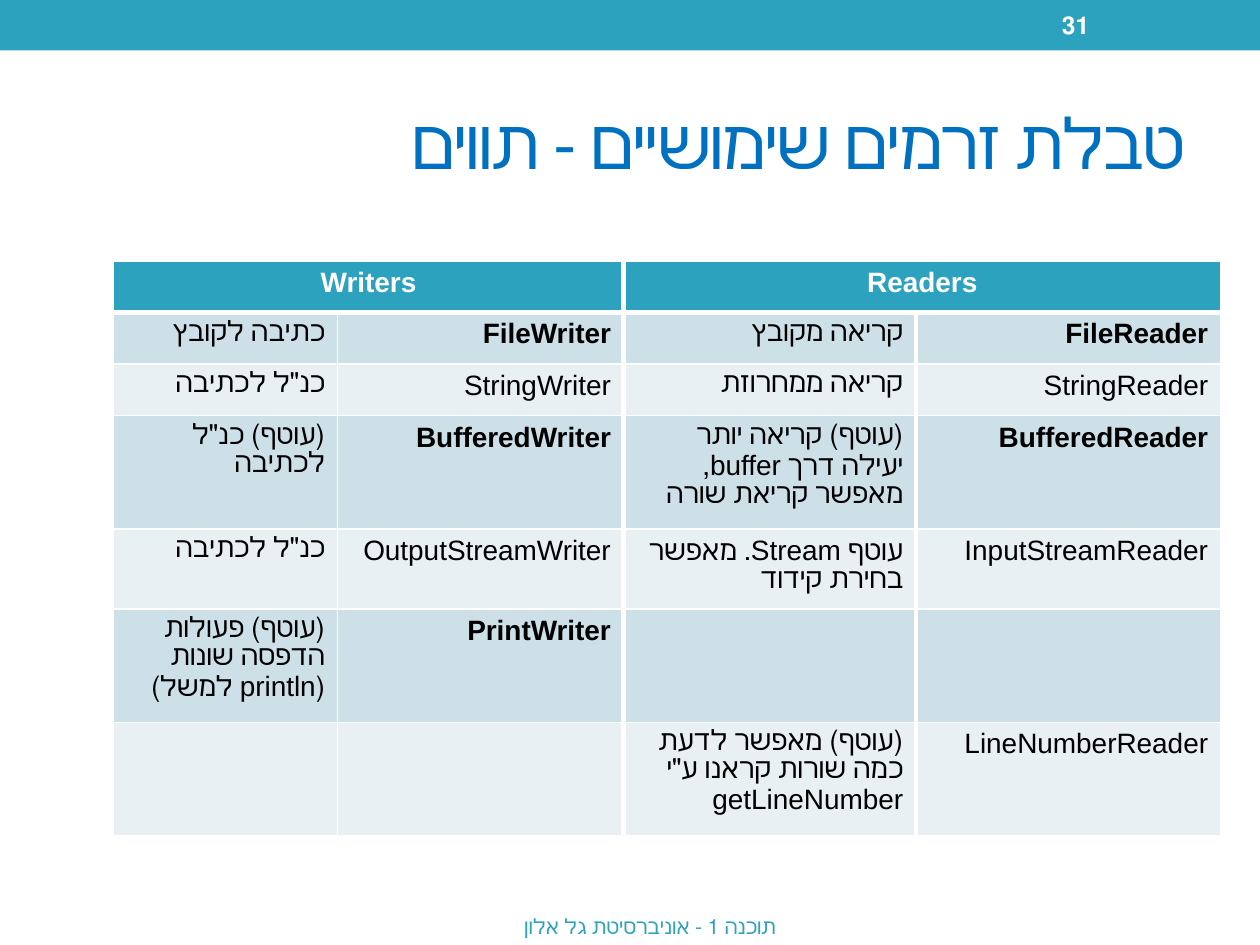
from lxml.etree import SubElement
from pptx import Presentation
from pptx.dml.color import RGBColor
from pptx.enum.shapes import MSO_SHAPE
from pptx.enum.text import MSO_ANCHOR, PP_ALIGN
from pptx.oxml.ns import qn
from pptx.util import Inches, Pt

TEAL = RGBColor(0x2D, 0xA2, 0xBF)
BLUE = RGBColor(0x00, 0x70, 0xC0)
WHITE = RGBColor(0xFF, 0xFF, 0xFF)
BLACK = RGBColor(0, 0, 0)
BANDS = RGBColor(0xCD, 0xE0, 0xE8), RGBColor(0xE8, 0xF0, 0xF4)

TITLE = "טבלת זרמים שימושיים - תווים"
FOOTER = "תוכנה 1 - אוניברסיטת גל אלון"
HEADERS = ["Writers", "Readers"]
ROWS = [
    ("כתיבה לקובץ", "FileWriter", "קריאה מקובץ", "FileReader"),
    ('כנ"ל לכתיבה', "StringWriter", "קריאה ממחרוזת", "StringReader"),
    ('(עוטף) כנ"ל לכתיבה', "BufferedWriter",
     "(עוטף) קריאה יותר יעילה דרך buffer, מאפשר קריאת שורה", "BufferedReader"),
    ('כנ"ל לכתיבה', "OutputStreamWriter",
     "עוטף Stream. מאפשר בחירת קידוד", "InputStreamReader"),
    ("(עוטף) פעולות הדפסה שונות (println למשל)", "PrintWriter", "", ""),
    ("", "", '(עוטף) מאפשר לדעת כמה שורות קראנו ע"י getLineNumber', "LineNumberReader"),
]
KEY_CLASSES = {"FileWriter", "FileReader", "BufferedWriter", "BufferedReader", "PrintWriter"}
COL_WIDTHS = [1.78, 2.27, 2.32, 2.42]
ROW_HEIGHT = 0.41
THIN, THICK = 1, 3


def write(tf, text, size, color, align, bold=False, font="Arial"):
    """Fill a text frame with one right-to-left paragraph and return its run."""
    p = tf.paragraphs[0]
    p.alignment = align
    p._p.get_or_add_pPr().set("rtl", "1")
    r = p.add_run()
    r.text = text
    # Row heights are measured from run sizes, so the font goes on the run.
    r.font.size, r.font.name, r.font.bold = Pt(size), font, bold
    r.font.color.rgb = color
    return r


def add_text(slide, box, *args, **kwargs):
    tf = slide.shapes.add_textbox(*map(Inches, box)).text_frame
    tf.word_wrap = True
    tf.vertical_anchor = MSO_ANCHOR.MIDDLE
    return write(tf, *args, **kwargs)


def style_cell(cell, fill, widths):
    """Set the cell's white borders (left, right, top, bottom) and its fill."""
    tcPr = cell._tc.get_or_add_tcPr()
    for side, width in zip("LRTB", widths):
        ln = SubElement(tcPr, qn(f"a:ln{side}"), w=str(Pt(width)))
        SubElement(SubElement(ln, qn("a:solidFill")), qn("a:srgbClr"), val=str(WHITE))
    cell.fill.solid()
    cell.fill.fore_color.rgb = fill


def add_streams_table(slide):
    n_rows, n_cols = len(ROWS) + 1, len(COL_WIDTHS)
    table = slide.shapes.add_table(
        n_rows, n_cols, Inches(0.9), Inches(2.07),
        Inches(sum(COL_WIDTHS)), Inches(n_rows * ROW_HEIGHT)).table
    for column, width in zip(table.columns, COL_WIDTHS):
        column.width = Inches(width)
    for row in table.rows:
        row.height = Inches(ROW_HEIGHT)

    edges = [THIN, THIN, THICK, THICK, THIN]
    for r in range(n_rows):
        for c in range(n_cols):
            fill = BANDS[(r - 1) % 2] if r else TEAL
            first, last = (c, c + 1) if r else (c // 2 * 2, c // 2 * 2 + 2)
            top = THICK if r == 1 else THIN
            bottom = THIN if r else THICK
            style_cell(table.cell(r, c), fill, (edges[first], edges[last], top, bottom))

    for i, header in enumerate(HEADERS):
        cell = table.cell(0, 2 * i)
        cell.merge(table.cell(0, 2 * i + 1))
        write(cell.text_frame, header, 16, WHITE, PP_ALIGN.CENTER, bold=True)
    for r, texts in enumerate(ROWS, 1):
        for c, text in enumerate(texts):
            if text:
                write(table.cell(r, c).text_frame, text, 16, BLACK, PP_ALIGN.RIGHT,
                      bold=text in KEY_CLASSES)


prs = Presentation()
prs.slide_width, prs.slide_height = Inches(10), Inches(7.5)
s = prs.slides.add_slide(prs.slide_layouts[6])

bar = s.shapes.add_shape(MSO_SHAPE.RECTANGLE, 0, 0, prs.slide_width, Inches(0.4))
bar.shadow.inherit = False
bar.fill.solid()
bar.fill.fore_color.rgb = TEAL
bar.line.fill.background()

title = add_text(s, (0.5, 0.58, 9, 1.08), TITLE, 40, BLUE, PP_ALIGN.RIGHT)
title.font._element.set("spc", "-100")
add_text(s, (8.33, 0.02, 1.17, 0.36), "31", 14, WHITE, PP_ALIGN.LEFT, bold=True)
add_streams_table(s)
add_text(s, (2.91, 7.17, 4.5, 0.36), FOOTER, 12, TEAL, PP_ALIGN.CENTER, font="Cabin")

prs.save("out.pptx")
